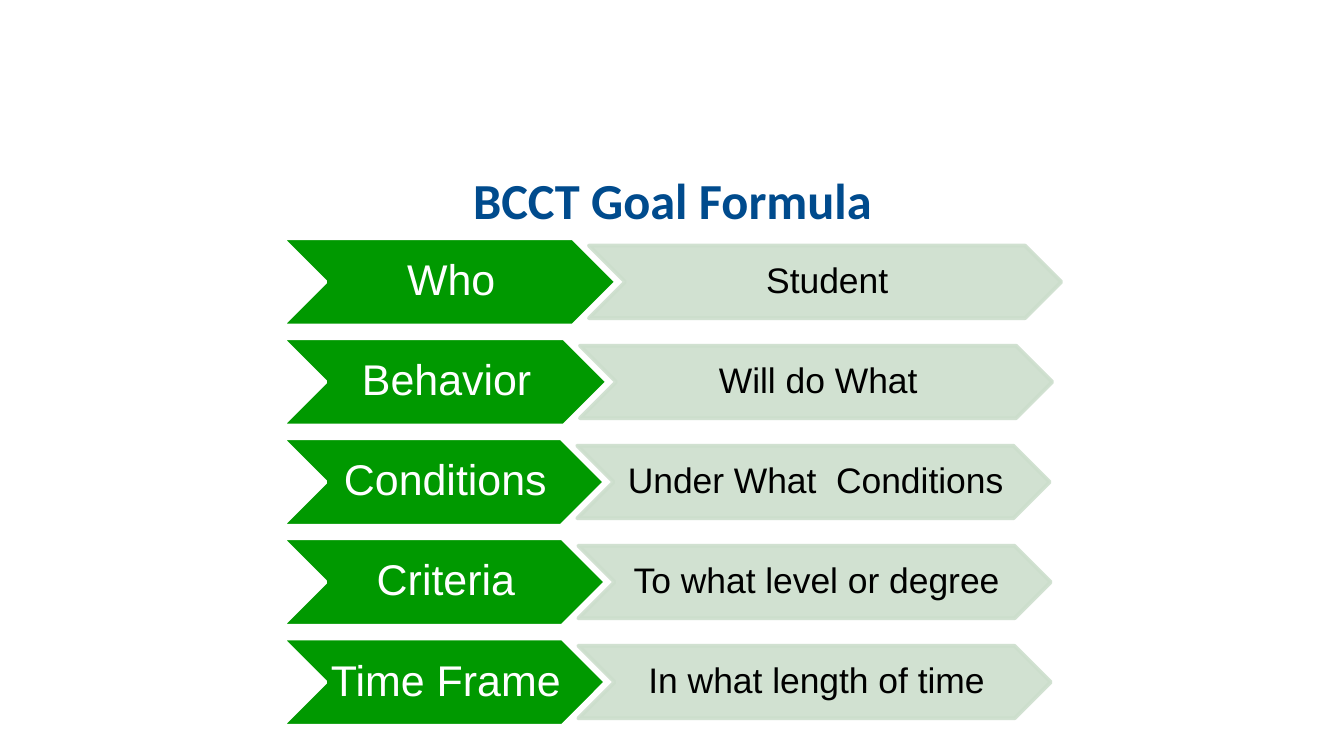
import pptx
import pptx.util
import pptx.dml.color
import pptx.enum.shapes
import pptx.enum.text
import pptx.oxml
import pptx.oxml.ns
from pptx.util import Cm

TITLE = "BCCT Goal Formula"
# label, width of its chevron in cm, detail
STEPS = [
    ("Who", 6.32, "Student"),
    ("Behavior", 6.15, "Will do What"),
    ("Conditions", 6.10, "Under What  Conditions"),
    ("Criteria", 6.12, "To what level or degree"),
    ("Time Frame", 6.12, "In what length of time"),
]
COLORS = {"title": "004B8D", "label": "009900", "detail": "CCDECC",
          "white": "FFFFFF", "black": "000000"}
LABEL = {"fill": "label", "line": "white", "text": "white", "size": 23, "alpha": None}
DETAIL = {"fill": "detail", "line": "detail", "text": "black", "size": 19, "alpha": 90}

LEFT, TOP, PITCH = 5.33, 4.50, 1.89
LABEL_HEIGHT, DETAIL_HEIGHT = 1.65, 1.37
DETAIL_WIDTH, OVERLAP = 8.93, 0.52


def rgb(name):
    return pptx.dml.color.RGBColor.from_string(COLORS[name])


def set_attributes(target, values):
    for name, value in values.items():
        setattr(target, name, value)


def set_fill(fill, color, alpha):
    """Fill with a solid colour; alpha is opacity in percent, or None."""
    fill.solid()
    fill.fore_color.rgb = rgb(color)
    if alpha:
        element = fill._xPr.find(".//" + pptx.oxml.ns.qn("a:srgbClr"))
        element.append(pptx.oxml.parse_xml(
            f'<a:alpha {pptx.oxml.ns.nsdecls("a")} val="{alpha * 1000}"/>'))


def write_text(shape, text, frame_format, paragraph_format, font_format, color):
    frame = shape.text_frame
    frame.text = text
    set_attributes(frame, frame_format)
    paragraph = frame.paragraphs[0]
    set_attributes(paragraph, paragraph_format)
    font = paragraph.runs[0].font
    set_attributes(font, font_format)
    font.color.rgb = rgb(color)


def add_chevron(slide, text, left, top, width, height, style):
    shape = slide.shapes.add_shape(pptx.enum.shapes.MSO_SHAPE.CHEVRON,
                                   Cm(left), Cm(top), Cm(width), Cm(height))
    shape.shadow.inherit = False
    set_fill(shape.fill, style["fill"], style["alpha"])
    shape.line.width = pptx.util.Pt(2)
    set_fill(shape.line.fill, style["line"], style["alpha"])
    write_text(
        shape, text,
        {"margin_left": Cm(0.08), "margin_right": 0, "margin_top": Cm(0.04),
         "margin_bottom": Cm(0.04), "word_wrap": False,
         "vertical_anchor": pptx.enum.text.MSO_ANCHOR.MIDDLE},
        {"alignment": pptx.enum.text.PP_ALIGN.CENTER, "line_spacing": 0.9},
        {"name": "Arial", "size": pptx.util.Pt(style["size"])}, style["text"])


def main():
    presentation = pptx.Presentation()
    set_attributes(presentation, {"slide_width": Cm(25.4), "slide_height": Cm(14.28)})
    slide = presentation.slides.add_slide(presentation.slide_layouts[5])

    title = slide.shapes.title
    set_attributes(title, {"left": Cm(0.43), "top": Cm(2.1),
                           "width": Cm(24.56), "height": Cm(2.24)})
    write_text(
        title, TITLE,
        {"margin_bottom": 0, "word_wrap": True,
         "auto_size": pptx.enum.text.MSO_AUTO_SIZE.NONE,
         "vertical_anchor": pptx.enum.text.MSO_ANCHOR.BOTTOM},
        {"alignment": pptx.enum.text.PP_ALIGN.CENTER},
        {"name": "Calibri", "size": pptx.util.Pt(27), "bold": True}, "title")

    for row, (label, label_width, detail) in enumerate(STEPS):
        top = TOP + row * PITCH
        add_chevron(slide, label, LEFT, top, label_width, LABEL_HEIGHT, LABEL)
        add_chevron(slide, detail, LEFT + label_width - OVERLAP,
                    top + (LABEL_HEIGHT - DETAIL_HEIGHT) / 2,
                    DETAIL_WIDTH, DETAIL_HEIGHT, DETAIL)

    presentation.save("out.pptx")


if __name__ == "__main__":
    main()
